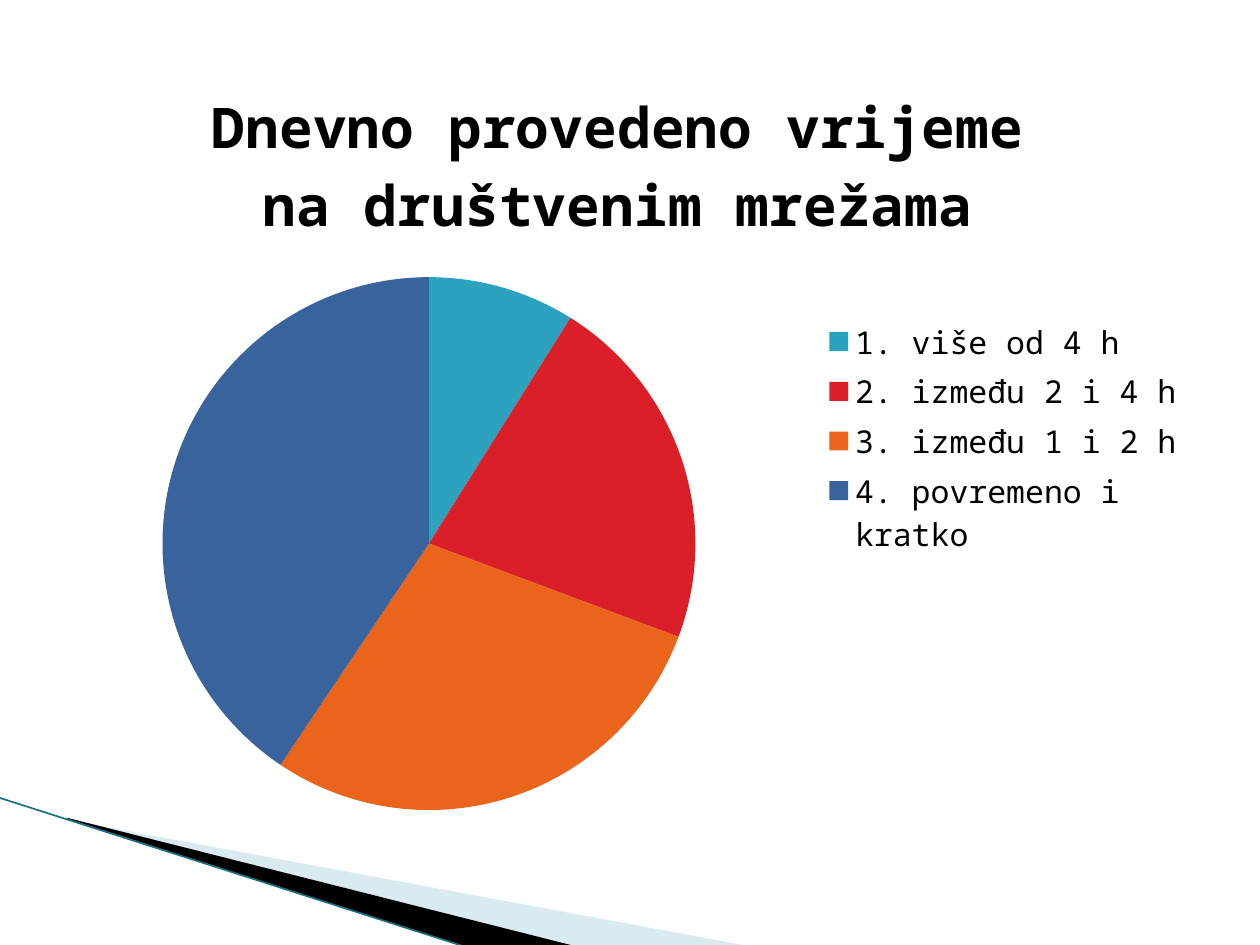
import pptx
import pptx.chart.data
import pptx.dml.color
import pptx.enum.chart
import pptx.enum.shapes
import pptx.enum.text
import pptx.oxml
import pptx.oxml.ns
import pptx.util
from lxml import etree

RGBColor = pptx.dml.color.RGBColor
BLACK = RGBColor(0x00, 0x00, 0x00)
PALE_BLUE = RGBColor(0xA0, 0xCB, 0xDC)
DARK_TEAL = RGBColor(0x1B, 0x70, 0x83)
SLICE_COLORS = [
    RGBColor(0x2D, 0xA2, 0xBF),
    RGBColor(0xDA, 0x1F, 0x28),
    RGBColor(0xEB, 0x64, 0x1B),
    RGBColor(0x39, 0x63, 0x9D),
]
FONT = "Noto Sans Mono"
TITLE_LINES = ["Dnevno provedeno vrijeme", "na društvenim mrežama"]
ANSWERS = {
    "1. više od 4 h ": 9,
    "2. između 2 i 4 h": 22,
    "3. između 1 i 2 h": 29,
    "4. povremeno i kratko": 41,
}
SLIDE_WIDTH = pptx.util.Inches(10)
SLIDE_HEIGHT = pptx.util.Inches(7.5)
DECORATION_BOX = (0, 6.33, 5.95, 1.18)
CHART_BOX = (0.31, 0.39, 9.19, 6.18)


def to_emu(lengths):
    return [pptx.util.Inches(length) for length in lengths]


def set_frame(shape, frame):
    left, top, width, height = to_emu(frame)
    shift_x, shift_y = shape.left - left, shape.top - top
    outline = shape._element.find(".//" + pptx.oxml.ns.qn("a:path"))
    outline.set("w", str(width))
    outline.set("h", str(height))
    for point in outline.iter(pptx.oxml.ns.qn("a:pt")):
        point.set("x", str(int(point.get("x")) + shift_x))
        point.set("y", str(int(point.get("y")) + shift_y))
    shape.left, shape.top, shape.width, shape.height = left, top, width, height


def add_wedge(slide, box, frame, points, color, opacity=None):
    left, top = box[:2]
    corners = [to_emu((left + x, top + y)) for x, y in points]
    builder = slide.shapes.build_freeform(*corners[0])
    builder.add_line_segments(corners[1:])
    shape = builder.convert_to_shape()
    set_frame(shape, (left + frame[0], top + frame[1], *frame[2:]))
    shape.shadow.inherit = False
    shape.fill.solid()
    shape.fill.fore_color.rgb = color
    shape.line.fill.background()
    if opacity:
        color_element = shape._element.spPr.find(
            ".//" + pptx.oxml.ns.qn("a:srgbClr"))
        alpha = etree.SubElement(color_element, pptx.oxml.ns.qn("a:alpha"))
        alpha.set("val", str(opacity * 1000))


def add_corner_decoration(slide, box):
    left, top, width, height = box
    add_wedge(slide, box, (0.78, -0.86, 4.16, 1.58),
              [(0.55, 0.18), (width, height), (4.56, height), (0.55, 0.17)],
              PALE_BLUE, 40)
    add_wedge(slide, box, (-0.06, 0, 4.16, 0.92),
              [(0.53, 0.16), (4.57, height), (3.72, 1.19), (0.54, 0.17)],
              BLACK)
    edge = slide.shapes.add_connector(
        pptx.enum.shapes.MSO_CONNECTOR.STRAIGHT,
        *to_emu((left - 0.01, top, left + 3.71, top + 1.19)))
    edge.line.color.rgb = DARK_TEAL
    edge.line.width = pptx.util.Pt(0.95)
    etree.SubElement(edge._element.spPr, pptx.oxml.ns.qn("a:effectLst"))


def manual_layout(box, left, top, width=None, height=None, inner=False):
    target = '<c:layoutTarget val="inner"/>' if inner else ""
    sizes = ""
    if width:
        sizes = f'<c:w val="{width / box[2]}"/><c:h val="{height / box[3]}"/>'
    return pptx.oxml.parse_xml(
        f'<c:layout {pptx.oxml.ns.nsdecls("c")}><c:manualLayout>{target}'
        '<c:xMode val="edge"/><c:yMode val="edge"/>'
        f'<c:x val="{left / box[2]}"/><c:y val="{top / box[3]}"/>{sizes}'
        '</c:manualLayout></c:layout>')


def place_part(element, layout, previous=None):
    for old_layout in element.findall(pptx.oxml.ns.qn("c:layout")):
        element.remove(old_layout)
    if previous is None:
        element.insert(0, layout)
    else:
        element.find(pptx.oxml.ns.qn(previous)).addnext(layout)


def format_font(font, size, bold):
    font.name = FONT
    font.size = pptx.util.Pt(size)
    font.bold = bold
    font.color.rgb = BLACK


def add_time_chart(slide, box):
    data = pptx.chart.data.CategoryChartData()
    data.categories = list(ANSWERS)
    data.add_series(" ".join(TITLE_LINES), list(ANSWERS.values()))
    chart = slide.shapes.add_chart(
        pptx.enum.chart.XL_CHART_TYPE.PIE, *to_emu(box), data).chart
    format_font(chart.font, 18, False)

    chart.has_title = True
    text_frame = chart.chart_title.text_frame
    text_frame.text = "\n".join(TITLE_LINES)
    for paragraph in text_frame.paragraphs:
        paragraph.alignment = pptx.enum.text.PP_ALIGN.CENTER
        format_font(paragraph.font, 32, True)
        for run in paragraph.runs:
            format_font(run.font, 32, True)
    chart.chart_title.include_in_layout = False
    place_part(chart.chart_title._element,
               manual_layout(box, 1.34, 0.26), "c:tx")

    chart.has_legend = True
    chart.legend.position = pptx.enum.chart.XL_LEGEND_POSITION.RIGHT
    chart.legend.include_in_layout = False
    format_font(chart.legend.font, 18, False)
    place_part(chart.legend._element,
               manual_layout(box, 6.18, 2.1, 2.94, 1.97), "c:legendPos")

    plot = chart.plots[0]
    plot.vary_by_categories = True
    place_part(plot._element.getparent(),
               manual_layout(box, 0.98, 1.81, 4.23, 4.23, inner=True))
    for index, color in enumerate(SLICE_COLORS):
        point = plot.series[0].points[index]
        point.format.fill.solid()
        point.format.fill.fore_color.rgb = color
        point.format.line.fill.background()


def main():
    presentation = pptx.Presentation()
    presentation.slide_width = SLIDE_WIDTH
    presentation.slide_height = SLIDE_HEIGHT
    slide = presentation.slides.add_slide(presentation.slide_layouts[6])
    add_corner_decoration(slide, DECORATION_BOX)
    add_time_chart(slide, CHART_BOX)
    presentation.save("out.pptx")


if __name__ == "__main__":
    main()
